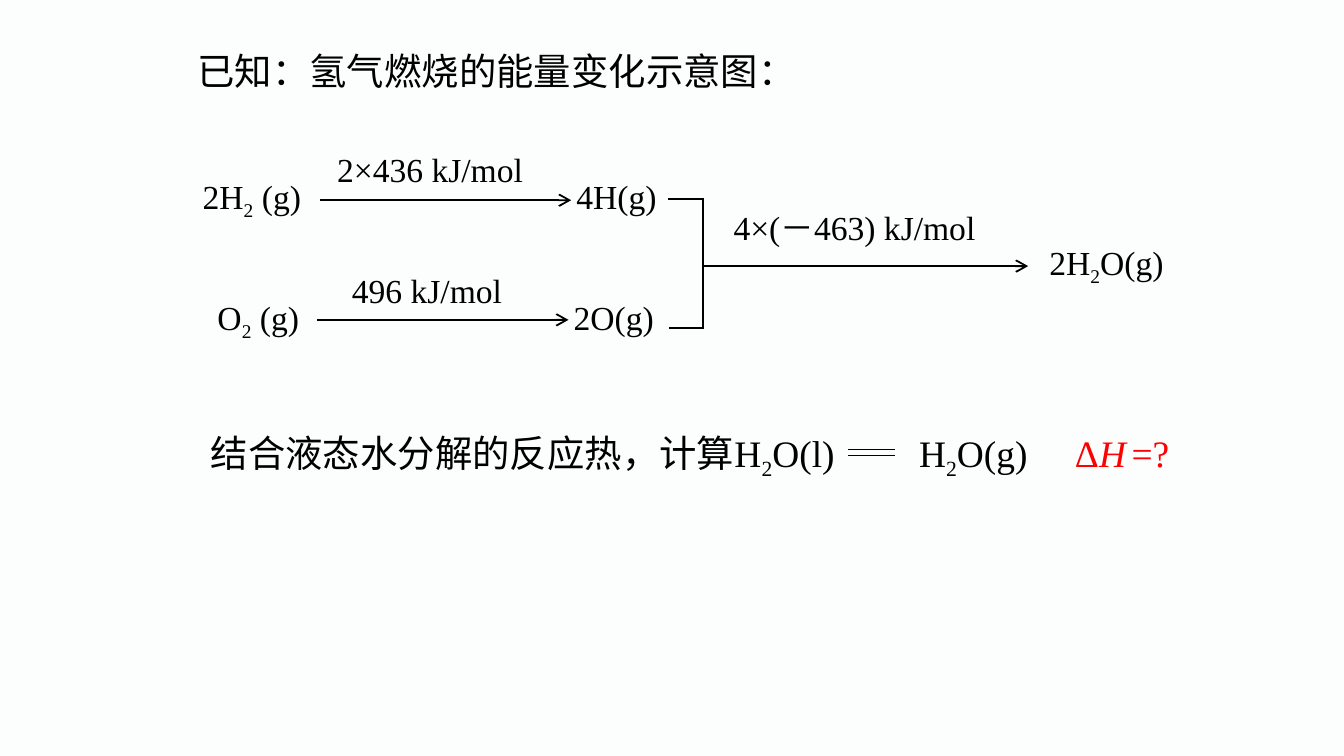
from lxml import etree
from pptx import Presentation
from pptx.dml.color import RGBColor
from pptx.enum.shapes import MSO_CONNECTOR
from pptx.enum.text import MSO_AUTO_SIZE
from pptx.oxml.ns import qn
from pptx.util import Inches, Pt

STRAIGHT = MSO_CONNECTOR.STRAIGHT
FIT = MSO_AUTO_SIZE.SHAPE_TO_FIT_TEXT
LATIN, HAN = "Times New Roman", "Noto Sans CJK SC"
BLACK, RED, PAPER = "000000", "FF0000", "FCFDFD"
SUB = "-25000"
WIDE = 10


def color(code):
    return RGBColor.from_string(code)


def add_run(para, text, size, font=LATIN, sub=False, ink=BLACK, italic=False):
    run = para.add_run()
    run.text = text
    run.font.size = Pt(size)
    run.font.name = font
    run.font.italic = italic
    run.font.color.rgb = color(ink)
    props = run._r.get_or_add_rPr()
    if sub:
        props.set("baseline", SUB)
    east = etree.Element(qn("a:ea"), typeface=HAN)
    props.find(qn("a:latin")).addnext(east)


def add_tabs(para, stops):
    tabs = etree.SubElement(para._p.get_or_add_pPr(), qn("a:tabLst"))
    for stop in stops:
        etree.SubElement(tabs, qn("a:tab"), pos=str(Inches(stop)), algn="l")


def add_text(slide, box, runs, size=18, wrap=False, stops=()):
    """Place a text box; each run is its text and a dict of run options."""
    shape = slide.shapes.add_textbox(*map(Inches, box))
    frame = shape.text_frame
    frame.word_wrap = wrap
    frame.auto_size = FIT
    para = frame.paragraphs[0]
    if stops:
        add_tabs(para, stops)
    for text, style in runs:
        add_run(para, text, size, **style)


def add_line(slide, start, end, width=1, arrow=False):
    points = map(Inches, (*start, *end))
    line = slide.shapes.add_connector(STRAIGHT, *points)
    line.line.color.rgb = color(BLACK)
    line.line.width = Pt(width)
    if arrow:
        etree.SubElement(line.line._get_or_add_ln(), qn("a:tailEnd"), type="arrow")
    etree.SubElement(line._element.spPr, qn("a:effectLst"))


def add_steps(slide):
    """Draw the two bond-breaking rows: reactant, arrow with energy, atoms."""
    low = {"sub": True}
    rows = [
        (1.26, 1.49, 2.38, (1.41, 0.97), "2H", (2.41, 1.06), "2×436 kJ/mol",
         4.19, "4H(g)"),
        (2.16, 2.38, 2.36, (1.52, 0.83), "O", (2.52, 1.96), "496 kJ/mol",
         4.17, "2O(g)"),
    ]
    for top, mid, tail, (left, width), gas, spot, energy, right, atoms in rows:
        add_text(slide, (left, top, width, 0.4),
                 [(gas, {}), ("2", low), (" (g)", {})])
        add_line(slide, (tail, mid), (tail + 1.87, mid), arrow=True)
        add_text(slide, (*spot, 1.81, 0.4), [(energy, {})], wrap=True)
        add_text(slide, (right, top, 0.82, 0.4), [(atoms, {})])


def add_product(slide):
    """Join both rows with a bracket and lead to water vapour."""
    add_line(slide, (5.23, 1.47), (5.23, 2.45))
    add_line(slide, (5.22, 1.48), (4.97, 1.48))
    add_line(slide, (5.23, 2.44), (4.98, 2.44))
    add_line(slide, (5.23, 1.98), (7.65, 1.98), arrow=True)
    add_text(slide, (5.36, 1.49, 2.17, 0.4), [("4×(－463) kJ/mol", {})], wrap=True)
    add_text(slide, (7.71, 1.75, 1.16, 0.4),
             [("2H", {}), ("2", {"sub": True}), ("O(g)", {})])


def add_question(slide):
    low = {"sub": True}
    runs = [
        ("结合液态水分解的反应热，计算H", {}), ("2", low),
        ("O(l)\tH", {}), ("2", low), ("O(g)\t", {}),
        ("Δ", {"ink": RED}), ("H", {"ink": RED, "italic": True}),
        (" ", {"ink": RED, "sub": True}), ("=?", {"ink": RED}),
    ]
    add_text(slide, (1.47, 3.15, 7.5, 0.44), runs, 20, True, (5.27, 6.43))
    for y in (3.34, 3.39):
        add_line(slide, (6.31, y), (6.66, y), 0.25)


def main():
    deck = Presentation()
    deck.slide_width, deck.slide_height = Inches(WIDE), Inches(WIDE * 9 / 16)
    slide = deck.slides.add_slide(deck.slide_layouts[6])
    back = slide.background.fill
    back.solid()
    back.fore_color.rgb = color(PAPER)
    add_text(slide, (1.37, 0.31, 4.72, 0.44),
             [("已知：氢气燃烧的能量变化示意图：", {"font": HAN})], 20)
    add_steps(slide)
    add_product(slide)
    add_question(slide)
    deck.save("out.pptx")


if __name__ == "__main__":
    main()
